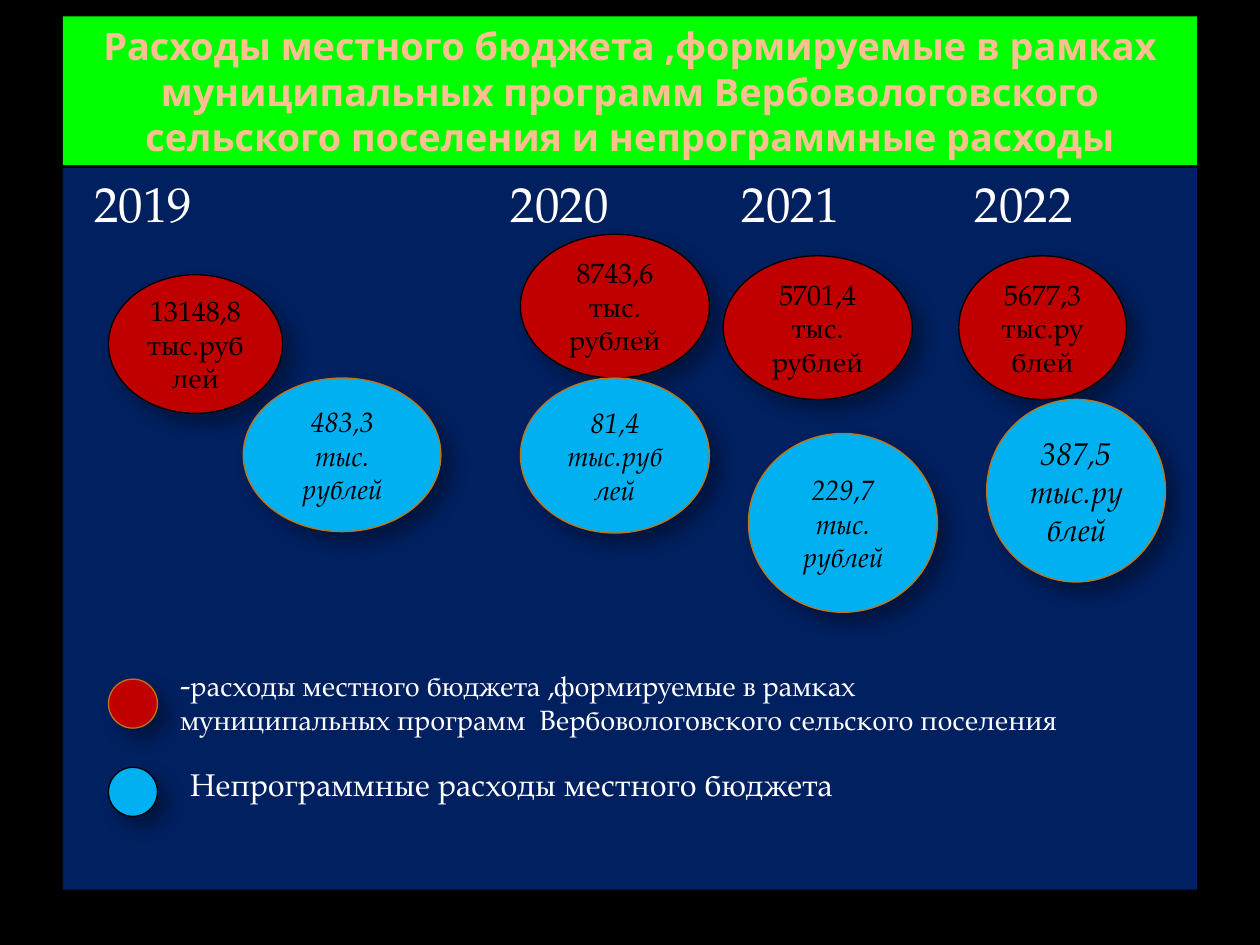
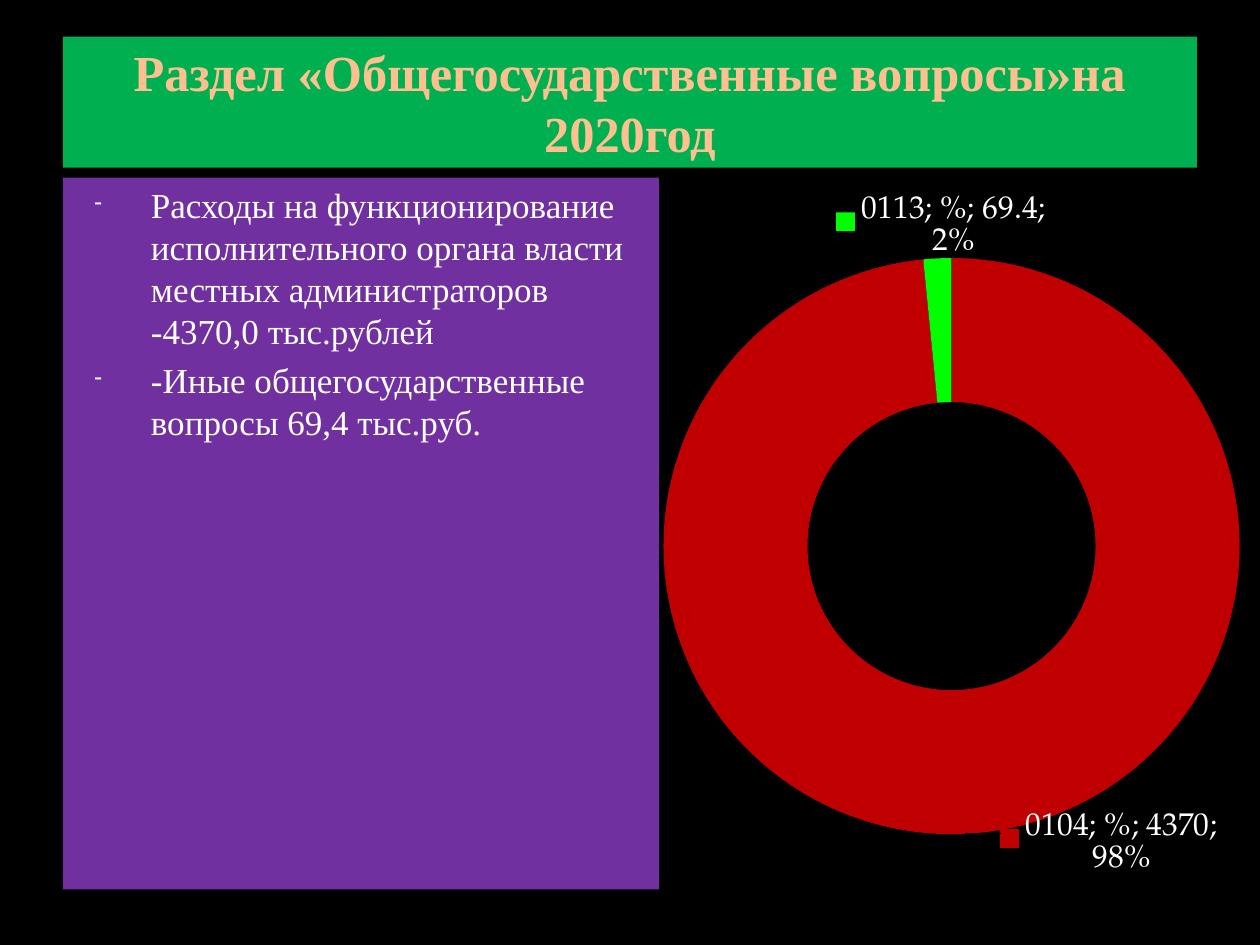
from pptx import Presentation
from pptx.chart.data import CategoryChartData
from pptx.dml.color import RGBColor
from pptx.enum.chart import XL_CHART_TYPE
from pptx.enum.shapes import MSO_SHAPE
from pptx.enum.text import MSO_ANCHOR, PP_ALIGN
from pptx.oxml import parse_xml
from pptx.oxml.ns import nsdecls
from pptx.util import Pt

COLORS = {
    "background": "000000", "title": "FFC091", "light": "FFFFFF", "dark": "000000",
    "lime": "00FF00", "green": "00B050", "navy": "002060", "purple": "7030A0",
    "red": "C00000", "blue": "00B0F0", "ochre": "C07512", "bullet": "F9F9F9",
}
SERIF, SANS, TIMES = "TeX Gyre Pagella", "Noto Sans", "Times New Roman"
MARGIN, BAND_WIDTH = 36, 648

BUDGET_TITLE = ("Расходы местного бюджета ,формируемые в рамках муниципальных программ "
                "Вербовологовского сельского поселения и непрограммные расходы")
YEARS = [("2019", 0), ("2020", 238), ("2021", 370), ("2022", 503)]
PROGRAM_SPENDING = [
    ("13148,8 тыс.рублей", (62, 157, 99.4, 79.2), 16),
    ("8743,6 тыс. рублей", (297.4, 133.9, 108, 82.1), 16),
    ("5701,4 тыс. рублей", (413.3, 146.2, 108, 82.1), 16),
    ("5677,3 тыс.рублей", (547.9, 146.2, 95.8, 82.1), 16),
]
OTHER_SPENDING = [
    ("483,3 тыс. рублей", (139, 216, 113, 87.8), 16),
    ("81,4 тыс.рублей", (297.4, 216, 108, 88.6), 16),
    ("229,7 тыс. рублей", (427.7, 247.7, 108, 102.2), 16),
    ("387,5 тыс.рублей", (563.8, 228.2, 102.2, 104.4), 18),
]
LEGEND = [
    ("red", "ochre", 388.1, (95.8, 376.6, 523.4, 48.2),
     [("-", 18), ("расходы местного бюджета ,формируемые в рамках муниципальных программ  "
                  "Вербовологовского сельского поселения", 16)]),
    ("blue", "dark", 438.5, (101.5, 433.4, 495.4, 28.8),
     [("Непрограммные расходы местного бюджета", 18)]),
]

SECTION_TITLE = "Раздел «Общегосударственные вопросы»на 2020год"
SECTION_ITEMS = [
    "Расходы на функционирование исполнительного органа власти местных "
    "администраторов -4370,0 тыс.рублей",
    "-Иные общегосударственные вопросы 69,4 тыс.руб.",
]
SECTION_SHARES = [("0104", 4370, "red", (0.235, 0.12)), ("0113", 69.4, "lime", (0, -0.15))]


def rgb(name):
    return RGBColor.from_string(COLORS[name])


def points(box):
    return [Pt(length) for length in box]


def set_font(font, size, face, color, bold=False, italic=False):
    font.size, font.name, font.bold, font.italic = Pt(size), face, bold, italic
    font.color.rgb = rgb(color)


def add_slide(deck):
    slide = deck.slides.add_slide(deck.slide_layouts[6])
    slide.background.fill.solid()
    slide.background.fill.fore_color.rgb = rgb("background")
    return slide


def add_panel(slide, box, fill, outline=None, preset=MSO_SHAPE.RECTANGLE):
    panel = slide.shapes.add_shape(preset, *points(box))
    panel.shadow.inherit = False
    panel.fill.solid()
    panel.fill.fore_color.rgb = rgb(fill)
    if outline:
        panel.line.color.rgb = rgb(outline)
        panel.line.width = Pt(0.75)
    else:
        panel.line.fill.background()
    panel.text_frame.word_wrap = True
    panel.text_frame.vertical_anchor = MSO_ANCHOR.TOP
    return panel


def add_title(slide, text, top, height, fill, face, size):
    frame = add_panel(slide, (MARGIN, top, BAND_WIDTH, height), fill).text_frame
    frame.vertical_anchor = MSO_ANCHOR.MIDDLE
    heading = frame.paragraphs[0]
    heading.text = text
    heading.alignment = PP_ALIGN.CENTER
    set_font(heading.font, size, face, "title", bold=True)


def add_bubble(slide, box, fill, outline, text="", size=16, italic=False):
    bubble = add_panel(slide, box, fill, outline, MSO_SHAPE.OVAL)
    effects = bubble._element.spPr.find("{*}effectLst")
    effects.append(parse_xml(
        f'<a:outerShdw {nsdecls("a")} blurRad="{Pt(10.2)}" dist="{Pt(8)}" dir="2700000" '
        f'rotWithShape="0"><a:srgbClr val="{COLORS["dark"]}"><a:alpha val="35000"/>'
        '</a:srgbClr></a:outerShdw>'))
    if text:
        bubble.text_frame.vertical_anchor = MSO_ANCHOR.MIDDLE
        amount = bubble.text_frame.paragraphs[0]
        amount.text = text
        amount.alignment = PP_ALIGN.CENTER
        set_font(amount.font, size, SERIF, "dark", italic=italic)


def add_years(slide):
    frame = add_panel(slide, (MARGIN, 95.8, BAND_WIDTH, 412.6), "navy").text_frame
    frame.margin_left = Pt(18)
    years = frame.paragraphs[0]
    years.text = "\t".join(year for year, _ in YEARS)
    years.alignment = PP_ALIGN.LEFT
    stops = "".join(f'<a:tab pos="{Pt(stop)}" algn="l"/>' for _, stop in YEARS[1:])
    years._p.get_or_add_pPr().append(
        parse_xml(f'<a:tabLst {nsdecls("a")}>{stops}</a:tabLst>'))
    years.space_before = Pt(5.6)
    set_font(years.font, 28, SERIF, "light")


def add_legend(slide):
    for fill, outline, top, box, pieces in LEGEND:
        add_bubble(slide, (62, top, 28, 28), fill, outline)
        frame = slide.shapes.add_textbox(*points(box)).text_frame
        frame.word_wrap = True
        for text, size in pieces:
            piece = frame.paragraphs[0].add_run()
            piece.text = text
            set_font(piece.font, size, SERIF, "light")


def add_section_items(slide):
    frame = add_panel(slide, (MARGIN, 101.5, 340.6, 406.8), "purple").text_frame
    for index, text in enumerate(SECTION_ITEMS):
        item = frame.add_paragraph() if index else frame.paragraphs[0]
        item.text = text
        item.alignment = PP_ALIGN.LEFT
        layout = item._p.get_or_add_pPr()
        layout.set("marL", str(Pt(43.2)))
        layout.set("indent", str(-Pt(32.4)))
        for bullet in (f'<a:buClr {nsdecls("a")}><a:srgbClr val="{COLORS["bullet"]}"/></a:buClr>',
                       f'<a:buSzPct {nsdecls("a")} val="65000"/>',
                       f'<a:buChar {nsdecls("a")} char="-"/>'):
            layout.append(parse_xml(bullet))
        item.space_before = Pt(4)
        set_font(item.font, 20, TIMES, "light")


def manual_layout(**values):
    entries = "".join(f'<c:{key} val="{value}"/>' for key, value in values.items())
    return parse_xml(f'<c:layout {nsdecls("c")}><c:manualLayout>{entries}'
                     '</c:manualLayout></c:layout>')


def add_shares(slide):
    shares = CategoryChartData()
    shares.categories = [code for code, *_ in SECTION_SHARES]
    shares.add_series("%", [amount for _, amount, *_ in SECTION_SHARES])
    chart = slide.shapes.add_chart(
        XL_CHART_TYPE.DOUGHNUT, *points((362.9, 112.3, 357.1, 395.3)), shares).chart
    chart.has_legend = chart.has_title = False
    set_font(chart.font, 18, SERIF, "light")
    ring = chart.plots[0]
    ring.vary_by_categories = True
    ring._element.find("{*}holeSize").set("val", "50")
    area = chart._chartSpace.chart.plotArea
    for old in area.findall("{*}layout"):
        area.remove(old)
    area.insert(0, manual_layout(layoutTarget="inner", xMode="edge", yMode="edge",
                                 x=0.013, y=0.089, w=0.987, h=0.833))
    series = ring.series[0]
    labels = series.data_labels
    labels.show_value = labels.show_percentage = True
    labels.show_category_name = labels.show_series_name = True
    labels.show_legend_key = True
    for index, (_, _, color, (x, y)) in enumerate(SECTION_SHARES):
        fill = series.points[index].format.fill
        fill.solid()
        fill.fore_color.rgb = rgb(color)
        label = parse_xml(
            f'<c:dLbl {nsdecls("c")}><c:idx val="{index}"/>' + "".join(
                f'<c:show{part} val="{shown}"/>' for part, shown in (
                    ("LegendKey", 1), ("Val", 1), ("CatName", 1), ("SerName", 1),
                    ("Percent", 1), ("BubbleSize", 0))) + '</c:dLbl>')
        label.insert(1, manual_layout(x=x, y=y))
        labels._element.insert(index, label)


def main():
    deck = Presentation()
    deck.slide_width, deck.slide_height = Pt(720), Pt(540)

    budget = add_slide(deck)
    add_title(budget, BUDGET_TITLE, 9.4, 85, "lime", SANS, 21.6)
    add_years(budget)
    for program, other in zip(PROGRAM_SPENDING, OTHER_SPENDING):
        for (text, box, size), fill, outline, italic in (
                (program, "red", "dark", False), (other, "blue", "ochre", True)):
            add_bubble(budget, box, fill, outline, text, size, italic)
    add_legend(budget)

    section = add_slide(deck)
    add_title(section, SECTION_TITLE, 20.9, 74.9, "green", TIMES, 28.8)
    add_section_items(section)
    add_shares(section)
    deck.save("out.pptx")


if __name__ == "__main__":
    main()
